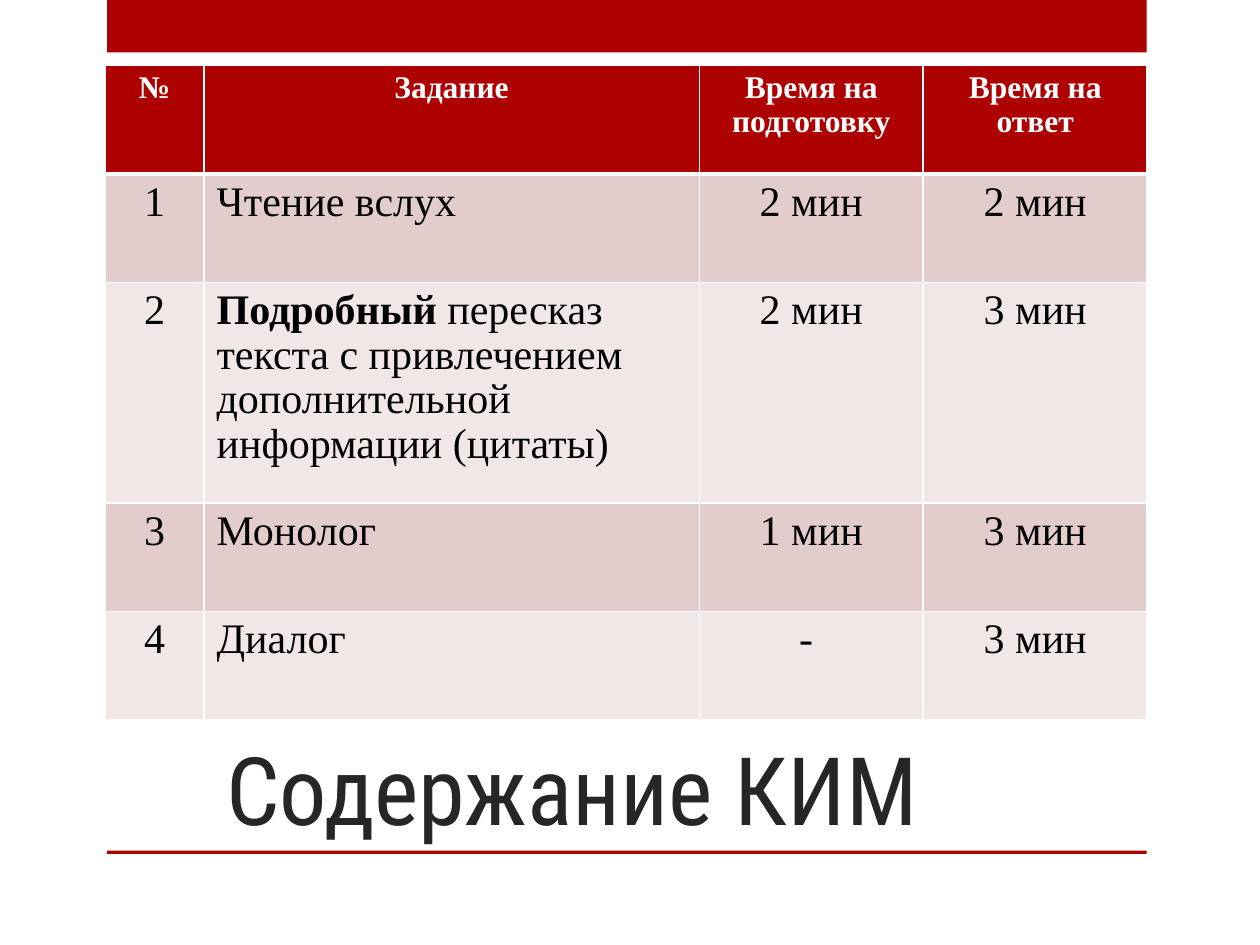
from lxml import etree
from pptx import Presentation
from pptx.dml.color import RGBColor
from pptx.enum.shapes import MSO_SHAPE
from pptx.enum.text import MSO_ANCHOR, PP_ALIGN
from pptx.oxml.ns import qn
from pptx.util import Pt

RECTANGLE = MSO_SHAPE.RECTANGLE
BOTTOM = MSO_ANCHOR.BOTTOM
LEFT, CENTER = PP_ALIGN.LEFT, PP_ALIGN.CENTER

RED = RGBColor(0xAD, 0x01, 0x01)
DARK_BAND = RGBColor(0xE3, 0xCC, 0xCC)
LIGHT_BAND = RGBColor(0xF1, 0xE7, 0xE7)
WHITE = RGBColor(0xFF, 0xFF, 0xFF)
BLACK = RGBColor(0, 0, 0)
CHARCOAL = RGBColor(0x26, 0x26, 0x26)

TASK_COLUMN = 1
COLUMN_WIDTHS = [56.6, 283, 128, 128]
ROW_HEIGHTS = [62, 62, 126, 62, 62]
ROWS = [
    ["№", "Задание", "Время на подготовку", "Время на ответ"],
    ["1", "Чтение вслух", "2 мин", "2 мин"],
    ["2", ("Подробный", " пересказ текста с привлечением дополнительной информации (цитаты)"),
     "2 мин", "3 мин"],
    ["3", "Монолог", "1 мин", "3 мин"],
    ["4", "Диалог", "- ", "3 мин"],
]


def add_bar(page, left, top, width, height):
    bar = page.shapes.add_shape(RECTANGLE, Pt(left), Pt(top), Pt(width), Pt(height))
    bar.shadow.inherit = False
    bar.fill.solid()
    bar.fill.fore_color.rgb = RED
    bar.line.fill.background()


def place_title(page, text, left, top, width, height):
    title = page.shapes.title
    title.left, title.top = Pt(left), Pt(top)
    title.width, title.height = Pt(width), Pt(height)
    frame = title.text_frame
    frame.text = text
    frame.vertical_anchor = BOTTOM
    para = frame.paragraphs[0]
    para.alignment = CENTER
    para.font.name = "Roboto Condensed"
    para.font.size = Pt(54)
    para.font.color.rgb = CHARCOAL


def set_borders(cell, **widths):
    properties = cell._tc.get_or_add_tcPr()
    for position, (side, width) in enumerate(widths.items()):
        line = etree.Element(qn(f"a:{side}"), w=str(Pt(width)))
        fill = etree.SubElement(line, qn("a:solidFill"))
        etree.SubElement(fill, qn("a:srgbClr"), val=str(WHITE))
        properties.insert(position, line)


def fill_cell(cell, content, row, column):
    header = row == 0
    cell.fill.solid()
    cell.fill.fore_color.rgb = RED if header else DARK_BAND if row % 2 else LIGHT_BAND
    set_borders(cell, lnL=1, lnR=1, lnT=3 if row == 1 else 1, lnB=3 if header else 1)
    para = cell.text_frame.paragraphs[0]
    para.alignment = LEFT if column == TASK_COLUMN and not header else CENTER
    para.line_spacing = 0.96
    para.font.name = "Times New Roman"
    para.font.size = Pt(18 if header else 24)
    para.font.color.rgb = WHITE if header else BLACK
    para.font.bold = header
    if isinstance(content, str):
        para.add_run().text = content
    else:
        for text, bold in zip(content, (True, False)):
            span = para.add_run()
            span.text = text
            span.font.bold = bold


def add_task_table(page, left, top):
    table = page.shapes.add_table(
        len(ROWS), len(COLUMN_WIDTHS), Pt(left), Pt(top),
        Pt(sum(COLUMN_WIDTHS)), Pt(sum(ROW_HEIGHTS))).table
    for column, width in zip(table.columns, COLUMN_WIDTHS):
        column.width = Pt(width)
    for row, height in zip(table.rows, ROW_HEIGHTS):
        row.height = Pt(height)
    for row, contents in enumerate(ROWS):
        for column, content in enumerate(contents):
            fill_cell(table.cell(row, column), content, row, column)


def main():
    deck = Presentation()
    deck.slide_width, deck.slide_height = Pt(720), Pt(540)
    page = deck.slides.add_slide(deck.slide_layouts[5])
    add_bar(page, 61.2, 0, 594, 30)
    add_bar(page, 61.2, 486, 594, 2)
    place_title(page, "Содержание КИМ", 60, 360, 534, 126)
    add_task_table(page, 60, 37.5)
    deck.save("out.pptx")


if __name__ == "__main__":
    main()
